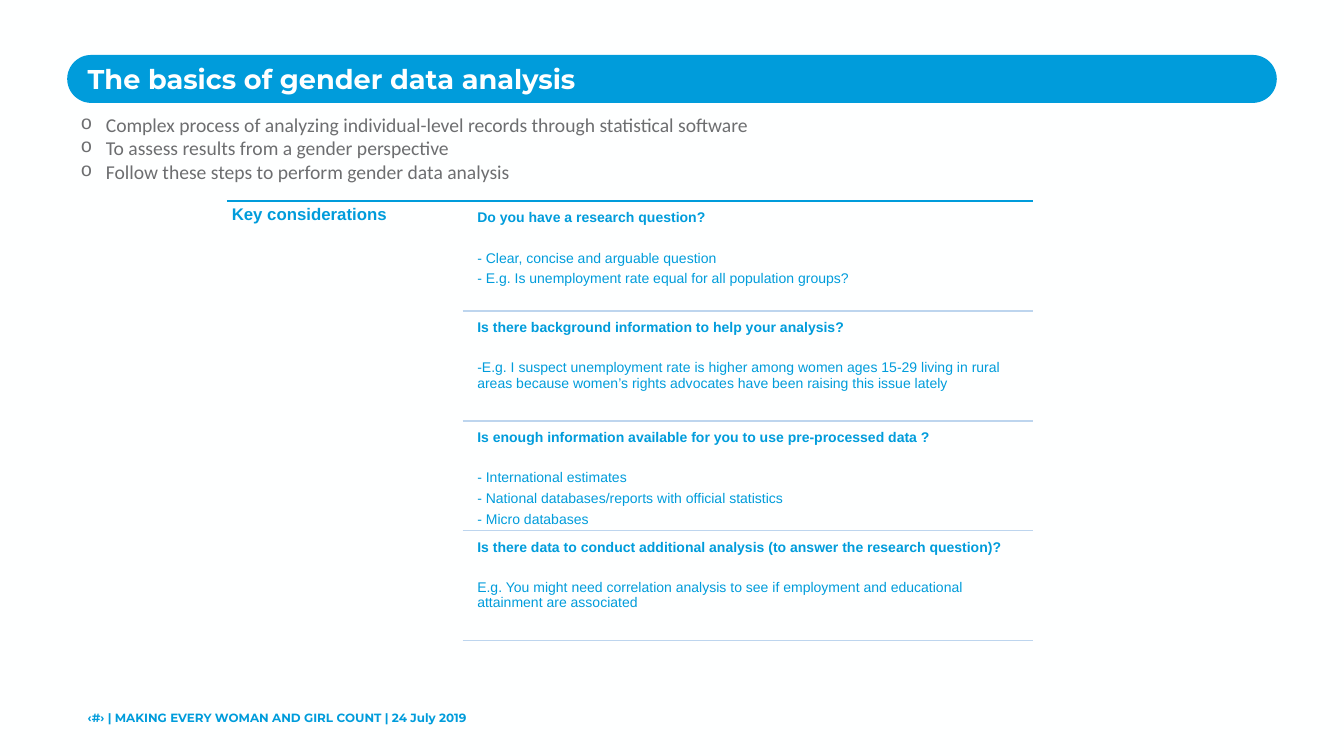
from pptx import Presentation
from pptx.dml.color import RGBColor
from pptx.enum.shapes import MSO_CONNECTOR, MSO_SHAPE
from pptx.enum.text import MSO_ANCHOR, MSO_AUTO_SIZE, PP_ALIGN
from pptx.oxml.ns import qn
from pptx.util import Pt
from lxml.etree import SubElement

BLUE, PALE_BLUE, GRAY, WHITE = "009CDB", "BDD5EE", "6D6E70", "FEFFFF"


def write(shape, lines, size, color, font="Arial", bold_lines=0, inset=0, spacing=1.0,
          after=0, first_after=None, bullet=None, indent=36, anchor=MSO_ANCHOR.TOP):
    """Fill a shape with one paragraph per line; the first bold_lines are bold."""
    frame = shape.text_frame
    frame.word_wrap = True
    frame.auto_size = MSO_AUTO_SIZE.NONE
    frame.vertical_anchor = anchor
    if inset is not None:
        frame.margin_left = frame.margin_right = Pt(inset)
        frame.margin_top = frame.margin_bottom = Pt(inset)
    for i, line in enumerate(lines):
        paragraph = frame.paragraphs[0] if i == 0 else frame.add_paragraph()
        paragraph.text = line
        paragraph.alignment = PP_ALIGN.LEFT
        paragraph.line_spacing = spacing
        paragraph.space_before = Pt(0)
        paragraph.space_after = Pt(first_after if i == 0 and first_after else after)
        if bullet:
            properties = paragraph._p.get_or_add_pPr()
            properties.set("marL", str(Pt(indent)))
            properties.set("indent", str(-Pt(indent)))
            SubElement(properties, qn("a:buFont"), typeface="Courier New")
            SubElement(properties, qn("a:buChar"), char=bullet)
        for run in paragraph.runs:
            run.font.name = font
            run.font.size = Pt(size)
            run.font.bold = i < bold_lines
            run.font.color.rgb = RGBColor.from_string(color)


def add_rule(left, right, top, color):
    """Draw a horizontal line."""
    rule = slide.shapes.add_connector(MSO_CONNECTOR.STRAIGHT, Pt(left), Pt(top), Pt(right), Pt(top))
    rule.line.color.rgb = RGBColor.from_string(color)
    rule.line.width = Pt(2)
    SubElement(rule._element.spPr, qn("a:effectLst"))


presentation = Presentation()
presentation.slide_width, presentation.slide_height = Pt(1920), Pt(1080)
slide = presentation.slides.add_slide(presentation.slide_layouts[1])
slide.background.fill.solid()
slide.background.fill.fore_color.rgb = RGBColor.from_string(WHITE)

# Title on a pill-shaped band, which goes behind the placeholders
band = slide.shapes.add_shape(MSO_SHAPE.ROUNDED_RECTANGLE, Pt(96), Pt(78.5), Pt(1728), Pt(68.5))
band.adjustments[0] = 0.5
band.shadow.inherit = False
band.fill.solid()
band.fill.fore_color.rgb = RGBColor.from_string(BLUE)
band.line.fill.background()
slide.shapes._spTree.insert(2, band._element)

title = slide.shapes.title
title.left, title.top, title.width, title.height = Pt(125.3), Pt(88.6), Pt(1672), Pt(47)
write(title, ["The basics of gender data analysis"], 38.8, WHITE, "Montserrat",
      bold_lines=1, anchor=MSO_ANCHOR.MIDDLE)

# Introduction
body = slide.placeholders[1]
body.left, body.top, body.width, body.height = Pt(108), Pt(157), Pt(1188), Pt(109)
write(body, [
    "Complex process of analyzing individual-level records through statistical software",
    "To assess results from a gender perspective",
    "Follow these steps to perform gender data analysis",
], 28, GRAY, "Calibri", inset=None, bullet="o")

# Key considerations: one row per question, each closed by a rule
rows_top, row_height = 287.2, 157
questions = [
    ["Do you have a research question?",
     "- Clear, concise and arguable question",
     "- E.g. Is unemployment rate equal for all population groups?"],
    ["Is there background information to help your analysis?",
     "-E.g. I suspect unemployment rate is higher among women ages 15-29 living in rural "
     "areas because women’s rights advocates have been raising this issue lately"],
    ["Is enough information available for you to use pre-processed data ?",
     "- International estimates",
     "- National databases/reports with official statistics",
     "- Micro databases"],
    ["Is there data to conduct additional analysis (to answer the research question)?",
     "E.g. You might need correlation analysis to see if employment and educational "
     "attainment are associated"],
]
add_rule(324, 1476, rows_top, BLUE)
heading = slide.shapes.add_textbox(Pt(324), Pt(rows_top), Pt(337), Pt(186.5))
write(heading, ["Key considerations"], 24, BLUE, bold_lines=1, inset=7.2, spacing=0.9)

for i, lines in enumerate(questions):
    row_top = rows_top + i * row_height
    question = slide.shapes.add_textbox(Pt(676), Pt(row_top + 7.5), Pt(799), Pt(149.5))
    write(question, lines, 20, BLUE, bold_lines=1, inset=5.8, spacing=0.9,
          after=7.9, first_after=36.4)
    add_rule(661, 1475.5, row_top + row_height, PALE_BLUE)

# Footer
footer = slide.shapes.add_textbox(Pt(125.3), Pt(1014.5), Pt(1024), Pt(21))
write(footer, ["‹#› | MAKING EVERY WOMAN AND GIRL COUNT | 24 July 2019"], 17, BLUE,
      "Montserrat", bold_lines=1)

presentation.save("out.pptx")
